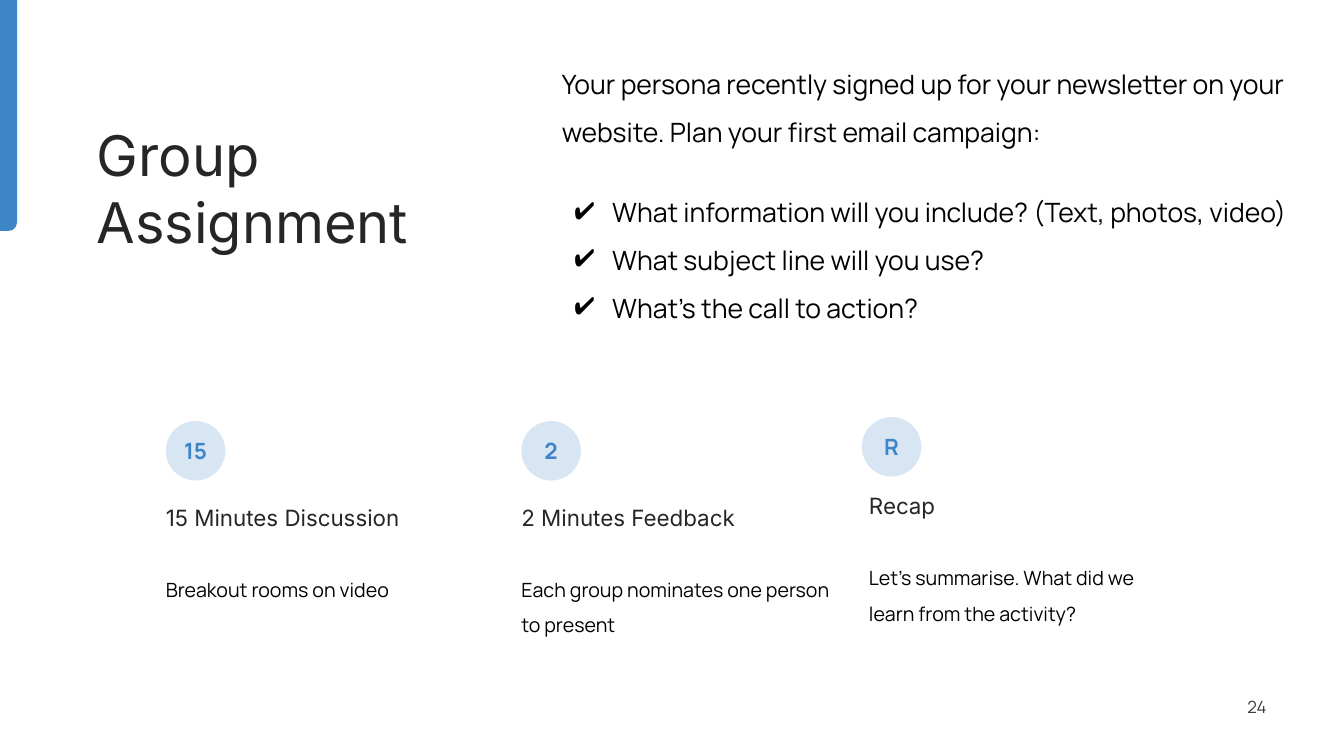
from pptx import Presentation
from pptx.dml.color import RGBColor
from pptx.enum.shapes import MSO_SHAPE
from pptx.enum.text import MSO_ANCHOR, MSO_AUTO_SIZE, PP_ALIGN
from pptx.oxml.ns import qn
from pptx.util import Cm, Pt
from lxml import etree

ROUND_CORNER, OVAL = MSO_SHAPE.ROUND_1_RECTANGLE, MSO_SHAPE.OVAL
TOP, MIDDLE = MSO_ANCHOR.TOP, MSO_ANCHOR.MIDDLE
LEFT, CENTER, RIGHT = PP_ALIGN.LEFT, PP_ALIGN.CENTER, PP_ALIGN.RIGHT
NO_FIT = MSO_AUTO_SIZE.NONE
BLUE, DARK, GREY, BLACK = "3D85C6", "262627", "3B3B3C", "000000"
HEADING_FONT, BODY_FONT = "Inter", "Manrope"


def color(value):
    return RGBColor.from_string(value)


def format_frame(frame, anchor=TOP, margin=0):
    frame.word_wrap = True
    frame.auto_size = NO_FIT
    frame.vertical_anchor = anchor
    frame.margin_left = frame.margin_right = Cm(margin)
    frame.margin_top = frame.margin_bottom = Cm(margin)


def format_paragraph(paragraph, text, size, font, ink, align=LEFT, spacing=1.0, after=0):
    paragraph.text = text
    paragraph.alignment = align
    paragraph.line_spacing = spacing
    paragraph.space_before = Pt(0)
    paragraph.space_after = Pt(after)
    paragraph.font.size = Pt(size)
    paragraph.font.name = font
    paragraph.font.color.rgb = color(ink)


def add_text_frame(slide, left, top, width, height, anchor=TOP, margin=0):
    box = slide.shapes.add_textbox(Cm(left), Cm(top), Cm(width), Cm(height))
    format_frame(box.text_frame, anchor, margin)
    return box.text_frame


def add_plain_shape(slide, kind, left, top, width, height):
    shape = slide.shapes.add_shape(kind, Cm(left), Cm(top), Cm(width), Cm(height))
    shape.shadow.inherit = False
    shape.fill.solid()
    shape.fill.fore_color.rgb = color(BLUE)
    shape.line.fill.background()
    return shape


def add_accent_bar(slide, left, top, width, height):
    # A quarter turn brings the rounded corner to the bottom right
    shift = (height - width) / 2
    bar = add_plain_shape(slide, ROUND_CORNER, left - shift, top + shift, height, width)
    bar.adjustments[0] = 0.5
    bar.rotation = 90


def add_title(slide, left, top, width, height):
    title = slide.shapes.title
    title.left, title.top, title.width, title.height = map(Cm, (left, top, width, height))
    format_frame(title.text_frame)
    format_paragraph(title.text_frame.paragraphs[0], "Group \vAssignment", 40, HEADING_FONT, DARK)


def add_check_mark(paragraph):
    properties = paragraph._p.get_or_add_pPr()
    properties.set("marL", str(Cm(1.27)))
    properties.set("indent", str(-Cm(0.95)))
    etree.SubElement(properties, qn("a:buSzPct")).set("val", "115000")
    etree.SubElement(properties, qn("a:buChar")).set("char", "✔")
    # Bullets come before the default run properties in the schema
    properties.append(properties.find(qn("a:defRPr")))


def add_brief(slide, left, top, width, height, intro, questions):
    frame = add_text_frame(slide, left, top, width, height, margin=0.25)
    format_paragraph(frame.paragraphs[0], intro, 19, BODY_FONT, BLACK, spacing=1.5, after=23)
    for question in questions:
        paragraph = frame.add_paragraph()
        format_paragraph(paragraph, question, 19, BODY_FONT, BLACK, spacing=1.5)
        add_check_mark(paragraph)


def add_step(slide, left, top, width, label, heading, detail, text_shift, text_drop):
    # Pale badge
    badge = add_plain_shape(slide, OVAL, left, top, 1.5, 1.5)
    fill_color = badge.fill._xPr.find(qn("a:solidFill"))[0]
    etree.SubElement(fill_color, qn("a:alpha")).set("val", "20000")
    format_frame(badge.text_frame, MIDDLE)
    paragraph = badge.text_frame.paragraphs[0]
    format_paragraph(paragraph, label, 16, BODY_FONT, BLUE, CENTER)
    paragraph.font.bold = True

    # Heading and detail
    frame = add_text_frame(slide, left + text_shift, top + text_drop, width, 3.28)
    format_paragraph(frame.paragraphs[0], heading, 16, HEADING_FONT, DARK, spacing=1.3, after=25)
    format_paragraph(frame.add_paragraph(), detail, 14, BODY_FONT, BLACK, spacing=1.5)


def add_page_number(slide, left, top, width, height, number):
    frame = add_text_frame(slide, left, top, width, height, MIDDLE)
    format_paragraph(frame.paragraphs[0], number, 12, BODY_FONT, GREY, RIGHT)


def main():
    presentation = Presentation()
    presentation.slide_width, presentation.slide_height = Cm(33.87), Cm(19.05)
    slide = presentation.slides.add_slide(presentation.slide_layouts[5])

    add_accent_bar(slide, 0, 0, 0.43, 5.82)
    add_title(slide, 2.44, 3.03, 11.4, 3.43)
    add_brief(
        slide, 13.91, 1.06, 19.13, 8.64,
        "Your persona recently signed up for your newsletter on your website. "
        "Plan your first email campaign:",
        ["What information will you include? (Text, photos, video)",
         "What subject line will you use?",
         "What’s the call to action?"])

    # Left, top, width, label, heading, detail, text shift, text drop
    steps = [
        (4.18, 10.61, 6.91, "15", "15 Minutes Discussion", "Breakout rooms on video", 0, 1.9),
        (13.14, 10.61, 7.82, "2", "2 Minutes Feedback",
         "Each group nominates one person to present", 0, 1.9),
        (21.72, 10.51, 6.91, "R", "Recap",
         "Let’s summarise. What did we learn from the activity?", 0.18, 1.7),
    ]
    for step in steps:
        add_step(slide, *step)

    add_page_number(slide, 30.68, 17.3, 1.24, 1.02, "24")
    presentation.save("out.pptx")


if __name__ == "__main__":
    main()
